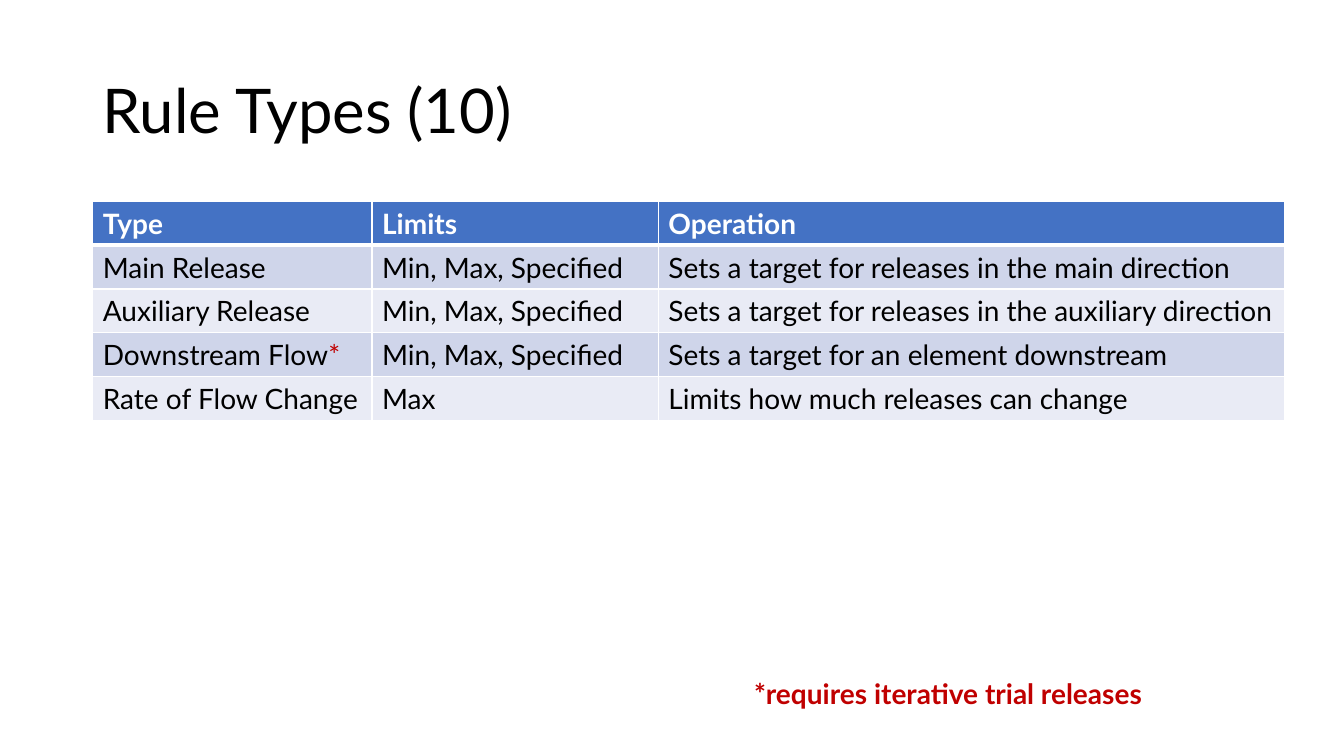
from dataclasses import dataclass

from lxml import etree
from pptx import Presentation
from pptx import util as u
from pptx.dml.color import RGBColor
from pptx.enum import text
from pptx.oxml import ns


@dataclass(frozen=True)
class Theme:
    font: str = "Lato"
    title_size: int = 44
    body_size: int = 20
    ink: str = "000000"
    white: str = "FFFFFF"
    accent: str = "C00000"
    header: str = "4472C4"
    bands: tuple = ("CFD5EA", "E9EBF5")
    rule: int = 1
    header_rule: int = 3


class SlideBuilder:
    def __init__(self, page, theme):
        self.page = page
        self.theme = theme

    def style(self, para, size, color, bold=False):
        para.font.name = self.theme.font
        para.font.size = u.Pt(size)
        para.font.bold = bold
        para.font.color.rgb = RGBColor.from_string(color)

    def text_box(self, words, left, top, width, height, size, color,
                 bold=False, anchor=text.MSO_ANCHOR.TOP, spacing=1.0):
        box = self.page.shapes.add_textbox(
            u.Inches(left), u.Inches(top), u.Inches(width), u.Inches(height))
        frame = box.text_frame
        frame.word_wrap = True
        frame.vertical_anchor = anchor
        para = frame.paragraphs[0]
        para.text = words
        para.line_spacing = spacing
        self.style(para, size, color, bold)

    def borders(self, cell, top, bottom):
        properties = cell._tc.get_or_add_tcPr()
        widths = {"L": self.theme.rule, "R": self.theme.rule, "T": top, "B": bottom}
        for side, width in widths.items():
            line = etree.SubElement(properties, ns.qn(f"a:ln{side}"), w=str(u.Pt(width)))
            fill = etree.SubElement(line, ns.qn("a:solidFill"))
            etree.SubElement(fill, ns.qn("a:srgbClr"), val=self.theme.white)

    def cell(self, cell, words, row):
        theme = self.theme
        header = row == 0
        self.borders(cell, theme.header_rule if row == 1 else theme.rule,
                     theme.header_rule if header else theme.rule)
        cell.fill.solid()
        cell.fill.fore_color.rgb = RGBColor.from_string(
            theme.header if header else theme.bands[(row - 1) % 2])
        para = cell.text_frame.paragraphs[0]
        label, mark, _ = words.partition("*")
        para.add_run().text = label
        self.style(para, theme.body_size, theme.white if header else theme.ink, header)
        if mark:
            span = para.add_run()
            span.text = mark
            span.font.color.rgb = RGBColor.from_string(theme.accent)

    def table(self, rows, left, top, widths, row_height):
        table = self.page.shapes.add_table(
            len(rows), len(widths), u.Inches(left), u.Inches(top),
            u.Inches(sum(widths)), u.Inches(row_height * len(rows))).table
        for column, width in zip(table.columns, widths):
            column.width = u.Inches(width)
        for index, row in enumerate(rows):
            table.rows[index].height = u.Inches(row_height)
            for column, words in enumerate(row):
                self.cell(table.cell(index, column), words, index)


RULE_TYPES = [
    ("Type", "Limits", "Operation"),
    ("Main Release", "Min, Max, Specified",
     "Sets a target for releases in the main direction"),
    ("Auxiliary Release", "Min, Max, Specified",
     "Sets a target for releases in the auxiliary direction"),
    ("Downstream Flow*", "Min, Max, Specified",
     "Sets a target for an element downstream"),
    ("Rate of Flow Change", "Max", "Limits how much releases can change"),
]


def main():
    deck = Presentation()
    deck.slide_width = u.Inches(13.33)
    deck.slide_height = u.Inches(7.5)
    theme = Theme()
    slide = SlideBuilder(deck.slides.add_slide(deck.slide_layouts[6]), theme)
    slide.text_box("Rule Types (10)", 0.92, 0.4, 11.5, 1.45, theme.title_size,
                   theme.ink, anchor=text.MSO_ANCHOR.MIDDLE, spacing=0.9)
    slide.table(RULE_TYPES, 0.92, 2, (2.77, 2.84, 6.21), 0.41)
    slide.text_box("*requires iterative trial releases", 7.38, 6.66, 4.88, 0.44,
                   theme.body_size, theme.accent, bold=True)
    deck.save("out.pptx")


if __name__ == "__main__":
    main()
